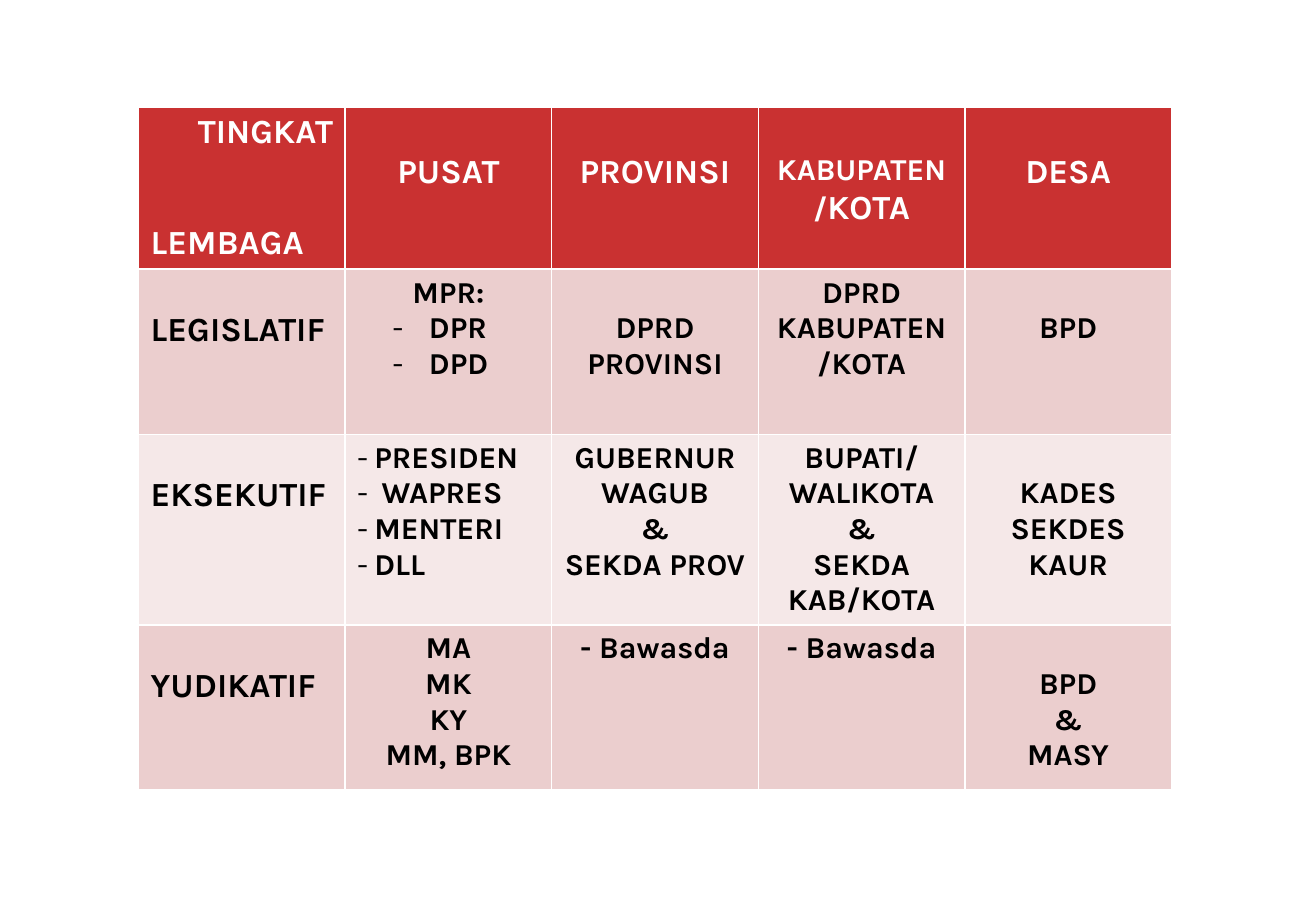
import pptx
import pptx.util
import pptx.dml.color
import pptx.enum.text
import pptx.oxml
import pptx.oxml.ns
import lxml.etree

RGBColor = pptx.dml.color.RGBColor
Inches, Pt = pptx.util.Inches, pptx.util.Pt
ALIGN = pptx.enum.text.PP_ALIGN
WHITE = RGBColor(0xFF, 0xFF, 0xFF)
BLACK = RGBColor(0, 0, 0)
RED = RGBColor(0xC9, 0x31, 0x31)
ROSE = RGBColor(0xEB, 0xCE, 0xCE)
PALE = RGBColor(0xF5, 0xE8, 0xE8)
FONT = "Karla"
HEAD, BODY = 20, 18
LINE = 1.17  # line height of the font, as a share of its size

# Content: each cell is (lines skipped at the top, lines of text)
HEADER = [
    (0, ["TINGKAT", "LEMBAGA"]),
    (1, ["PUSAT"]),
    (1, ["PROVINSI"]),
    (1, [[("KABUPATEN/", BODY), ("KOTA", HEAD)]]),
    (1, ["DESA"]),
]
BODY_ROWS = [
    [(1, ["LEGISLATIF"]),
     (0, ["MPR:", "DPR", "DPD"]),
     (1, ["DPRD PROVINSI"]),
     (0, ["DPRD KABUPATEN/KOTA"]),
     (1, ["BPD"])],
    [(1, ["EKSEKUTIF"]),
     (0, ["PRESIDEN", "WAPRES", "MENTERI", "DLL"]),
     (0, ["GUBERNUR", "WAGUB", "&", "SEKDA PROV"]),
     (0, ["BUPATI/", "WALIKOTA", "&", "SEKDA KAB/KOTA"]),
     (1, ["KADES", "SEKDES", "KAUR"])],
    [(1, ["YUDIKATIF"]),
     (0, ["MA", "MK", "KY", "MM, BPK"]),
     (0, ["- Bawasda"]),
     (0, ["- Bawasda"]),
     (1, ["BPD", "&", "MASY"])],
]
# Dashed items: text -> (left margin, hanging indent) in inches
DASHED = {
    "DPR": (0.59, 0.3), "DPD": (0.59, 0.3),
    "PRESIDEN": (0.14, 0.14), "WAPRES": (0.2, 0.2),
    "MENTERI": (0.14, 0.14), "DLL": (0.14, 0.14),
}
FILLS = [RED, ROSE, PALE, ROSE]
ROW_HEIGHTS = [1.33, 1.36, 1.57, 1.36]
COL_WIDTH = 1.7
LEFT, TOP = 1.14, 0.88


def add_text(p, text, size=BODY, color=BLACK, align=ALIGN.CENTER, before=0):
    """Write a string, or a list of (string, size) runs, into a paragraph."""
    p.alignment = align
    p.space_before = Pt(before)
    for part, part_size in [(text, size)] if isinstance(text, str) else text:
        r = p.add_run()
        r.text = part
        r.font.name, r.font.size, r.font.bold = FONT, Pt(part_size), True
        r.font.color.rgb = color


def add_dash(p, margin, hang):
    pPr = p._p.get_or_add_pPr()
    pPr.set("marL", str(Inches(margin)))
    pPr.set("indent", str(-Inches(hang)))
    for tag, name, value in (("a:buFont", "typeface", FONT), ("a:buChar", "char", "-")):
        lxml.etree.SubElement(pPr, pptx.oxml.ns.qn(tag)).set(name, value)


def add_borders(cell):
    tcPr = cell._tc.get_or_add_tcPr()
    for i, side in enumerate("LRTB"):
        tcPr.insert(i, pptx.oxml.parse_xml(
            f'<a:ln{side} {pptx.oxml.ns.nsdecls("a")} w="{Pt(1)}"><a:solidFill>'
            f'<a:srgbClr val="{WHITE}"/></a:solidFill></a:ln{side}>'))


def fill_cell(cell, row, col, skipped, lines):
    cell.fill.solid()
    cell.fill.fore_color.rgb = FILLS[row]
    add_borders(cell)
    skip_size = HEAD if row == 0 else BODY
    cell.margin_top = Inches(0.05) + Pt(skipped * skip_size * LINE)
    tf = cell.text_frame
    for i, text in enumerate(lines):
        p = tf.paragraphs[0] if i == 0 else tf.add_paragraph()
        dash = DASHED.get(text) if isinstance(text, str) else None
        align, before = ALIGN.CENTER, 0
        if col == 0 or dash:
            align = ALIGN.LEFT
        if row == col == 0:  # corner: column title at right, row title two lines below
            align = ALIGN.RIGHT if i == 0 else ALIGN.LEFT
            before = 2 * BODY * LINE * i
        add_text(p, text, size=HEAD if row == 0 or col == 0 else BODY,
                 color=WHITE if row == 0 else BLACK, align=align, before=before)
        if dash:
            add_dash(p, *dash)


prs = pptx.Presentation()
prs.slide_width, prs.slide_height = Inches(10.83), Inches(7.5)
slide = prs.slides.add_slide(prs.slide_layouts[6])

# Table of institutions by level of government
rows = [HEADER] + BODY_ROWS
table = slide.shapes.add_table(
    len(rows), len(HEADER), Inches(LEFT), Inches(TOP),
    Inches(COL_WIDTH * len(HEADER)), Inches(sum(ROW_HEIGHTS))).table
table.horz_banding = False
for column in table.columns:
    column.width = Inches(COL_WIDTH)
for row, cells in enumerate(rows):
    table.rows[row].height = Inches(ROW_HEIGHTS[row])
    for col, (skipped, lines) in enumerate(cells):
        fill_cell(table.cell(row, col), row, col, skipped, lines)

prs.save("out.pptx")
